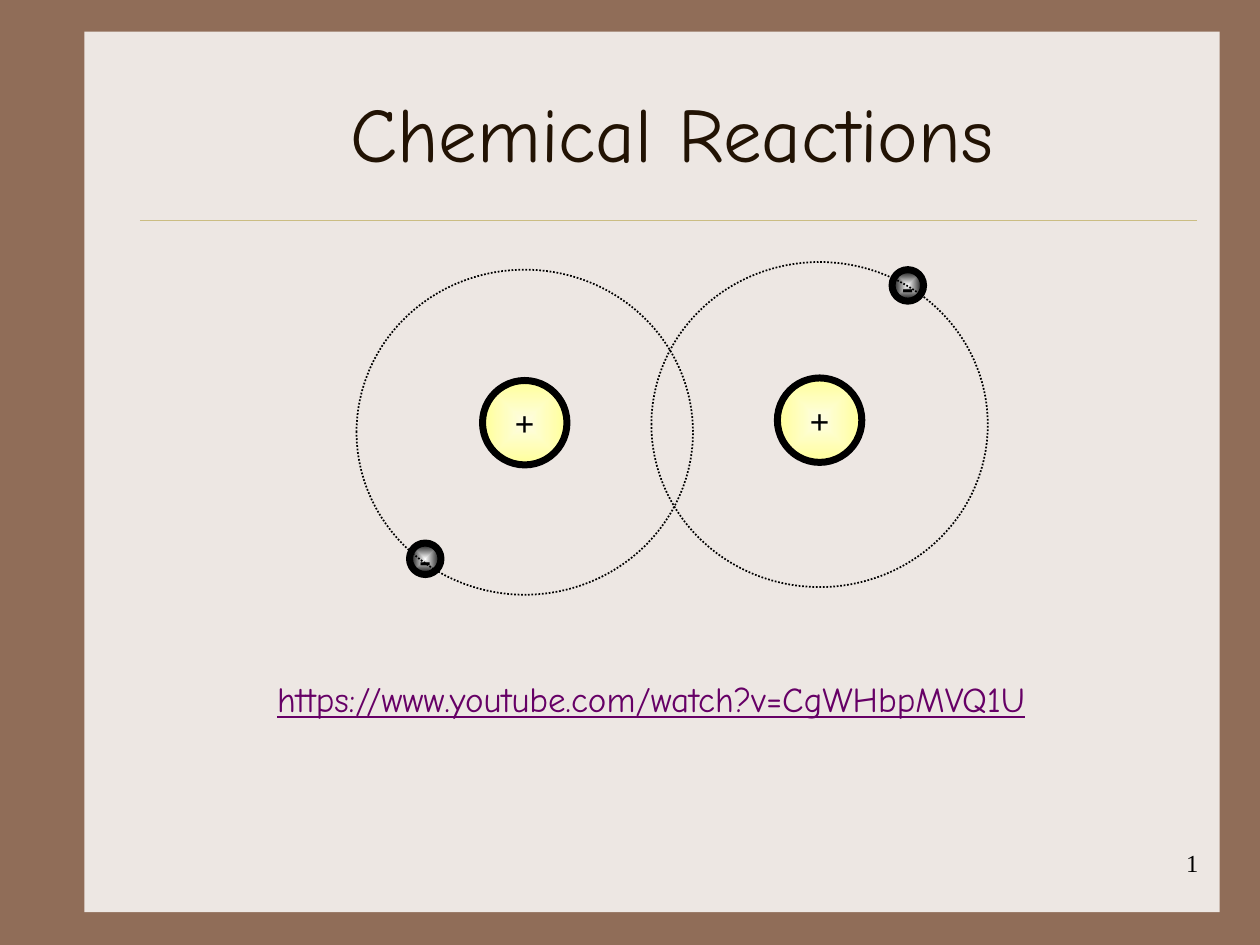
from lxml.etree import SubElement
from pptx import Presentation
from pptx.dml.color import RGBColor
from pptx.enum.dml import MSO_LINE
from pptx.enum.shapes import MSO_CONNECTOR, MSO_SHAPE
from pptx.enum.text import MSO_ANCHOR, PP_ALIGN
from pptx.oxml.ns import qn
from pptx.util import Inches, Pt

BROWN = RGBColor(0x90, 0x6D, 0x58)
PAPER = RGBColor(0xED, 0xE7, 0xE3)
GOLD = RGBColor(0xCB, 0xBD, 0x83)
DARK = RGBColor(0x22, 0x13, 0x04)
PURPLE = RGBColor(0x66, 0x00, 0x66)
CREAM = RGBColor(0xFE, 0xFD, 0xE3)
YELLOW = RGBColor(0xFF, 0xFF, 0x99)
WHITE = RGBColor(0xFF, 0xFF, 0xFF)
BLACK = RGBColor(0x00, 0x00, 0x00)
HAND = "Comic Neue"
SERIF = "Times New Roman"


def put_text(shape, text, size, font=SERIF, color=BLACK, bold=False, underline=False,
             align=PP_ALIGN.CENTER, anchor=MSO_ANCHOR.TOP, wrap=True, after=None):
    tf = shape.text_frame
    tf.word_wrap = wrap
    tf.vertical_anchor = anchor
    p = tf.paragraphs[0]
    p.alignment = align
    if after is not None:
        p.space_after = Pt(after)
    r = p.add_run()
    r.text = text
    f = r.font
    f.name, f.size, f.bold, f.underline = font, Pt(size), bold, underline
    f.color.rgb = color


def fill_radial(shape, inner, outer):
    shape.fill.gradient()
    for stop, color in zip(shape.fill.gradient_stops, (inner, outer)):
        stop.color.rgb = color
    grad = shape._element.spPr.find(qn("a:gradFill"))
    grad.remove(grad.find(qn("a:lin")))
    radial = SubElement(grad, qn("a:path"), {"path": "shape"})
    SubElement(radial, qn("a:fillToRect"), dict.fromkeys("ltrb", "50000"))


def add_circle(shapes, left, top, width, height, weight):
    sp = shapes.add_shape(MSO_SHAPE.OVAL, Inches(left), Inches(top),
                          Inches(width), Inches(height))
    sp.shadow.inherit = False
    sp.line.color.rgb = BLACK
    sp.line.width = Pt(weight)
    return sp


def add_particle(shapes, left, top, size, sign, inner, outer):
    sp = add_circle(shapes, left, top, size, size, 4)
    fill_radial(sp, inner, outer)
    put_text(sp, sign, 20, bold=True, anchor=MSO_ANCHOR.MIDDLE, wrap=False)


def add_atom(slide, left, top, nucleus, electron):
    shapes = slide.shapes.add_group_shape().shapes
    add_particle(shapes, left + nucleus[0], top + nucleus[1], 0.67, "+", CREAM, YELLOW)
    add_particle(shapes, left + electron[0], top + electron[1], 0.25, "-", WHITE, BLACK)
    orbit = add_circle(shapes, left, top, 2.67, 2.58, 1)
    orbit.fill.background()
    orbit.line.dash_style = MSO_LINE.ROUND_DOT


def add_panel(slide, left, top, width, height):
    sp = slide.shapes.add_shape(MSO_SHAPE.RECTANGLE, Inches(left), Inches(top),
                                Inches(width), Inches(height))
    sp.shadow.inherit = False
    sp.fill.solid()
    sp.fill.fore_color.rgb = PAPER
    sp.line.fill.background()


def add_rule(slide, left, right, y):
    line = slide.shapes.add_connector(MSO_CONNECTOR.STRAIGHT, Inches(left), Inches(y),
                                      Inches(right), Inches(y))
    line.line.color.rgb = GOLD
    line.line.width = Pt(0.25)
    SubElement(line._element.spPr, qn("a:effectLst"))


def place_title(slide, left, top, width, height, text):
    title = slide.shapes.title
    title.left, title.top = Inches(left), Inches(top)
    title.width, title.height = Inches(width), Inches(height)
    put_text(title, text, 44, font=HAND, color=DARK, anchor=MSO_ANCHOR.MIDDLE)
    slide.shapes._spTree.append(title._element)


def add_label(slide, left, top, width, height, text, size, **fmt):
    box = slide.shapes.add_textbox(Inches(left), Inches(top), Inches(width), Inches(height))
    put_text(box, text, size, **fmt)


def main():
    prs = Presentation()
    prs.slide_width, prs.slide_height = Inches(10), Inches(7.5)
    s = prs.slides.add_slide(prs.slide_layouts[5])
    s.background.fill.solid()
    s.background.fill.fore_color.rgb = BROWN

    add_panel(s, 0.67, 0.25, 9.01, 6.99)
    add_rule(s, 1.11, 9.5, 1.75)
    place_title(s, 1.17, 0.42, 8.33, 1.25, "Chemical Reactions")
    add_atom(s, 2.83, 2.14, nucleus=(1, 0.88), electron=(0.42, 2.17))
    add_atom(s, 5.17, 2.08, nucleus=(1, 0.92), electron=(1.91, 0.06))
    add_label(s, 7.53, 6.68, 2.08, 0.5, "1", 14, align=PP_ALIGN.RIGHT)
    add_label(s, 1.67, 5.33, 7, 0.44, "https://www.youtube.com/watch?v=CgWHbpMVQ1U", 20,
              font=HAND, color=PURPLE, underline=True, after=12)
    prs.save("out.pptx")


if __name__ == "__main__":
    main()
